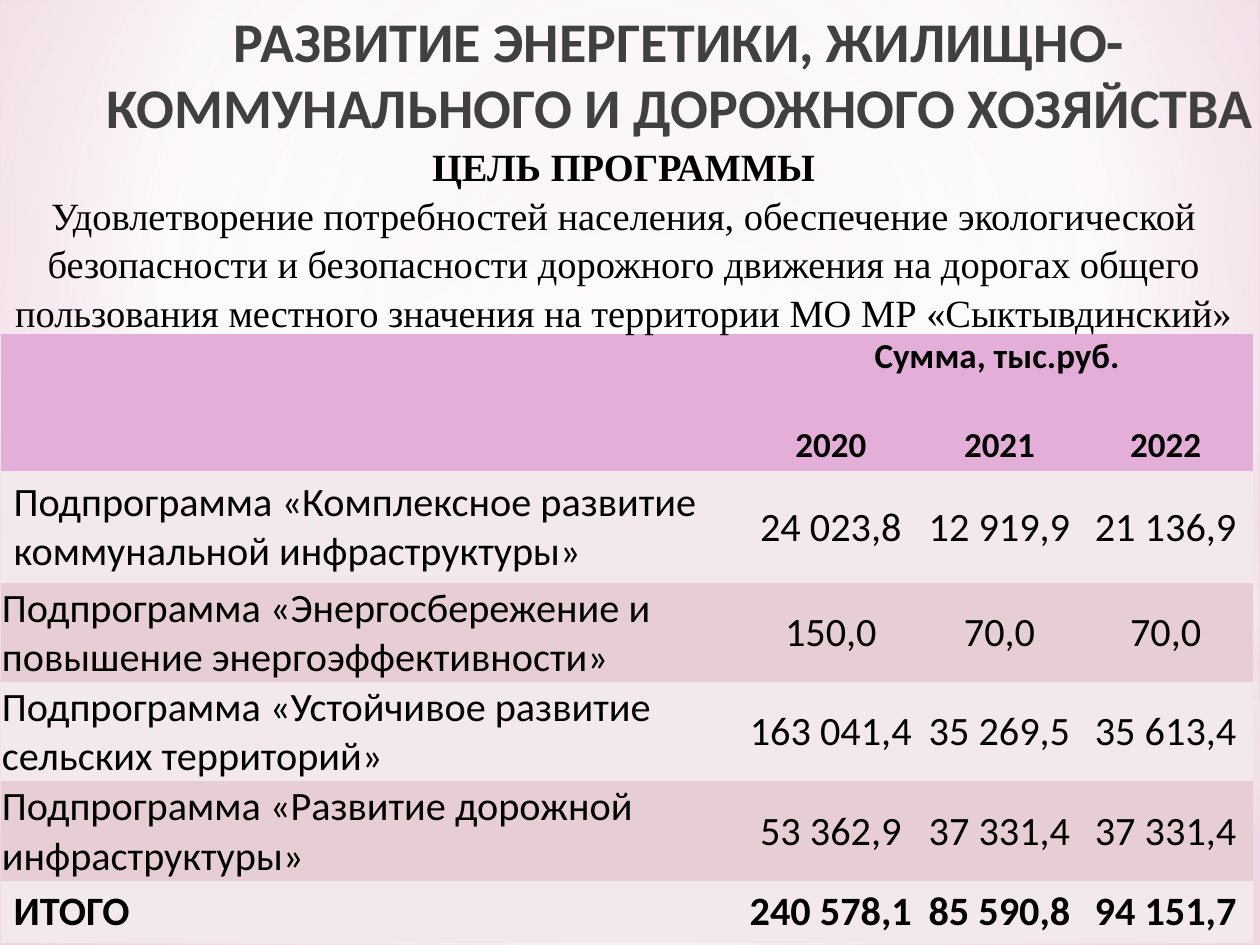
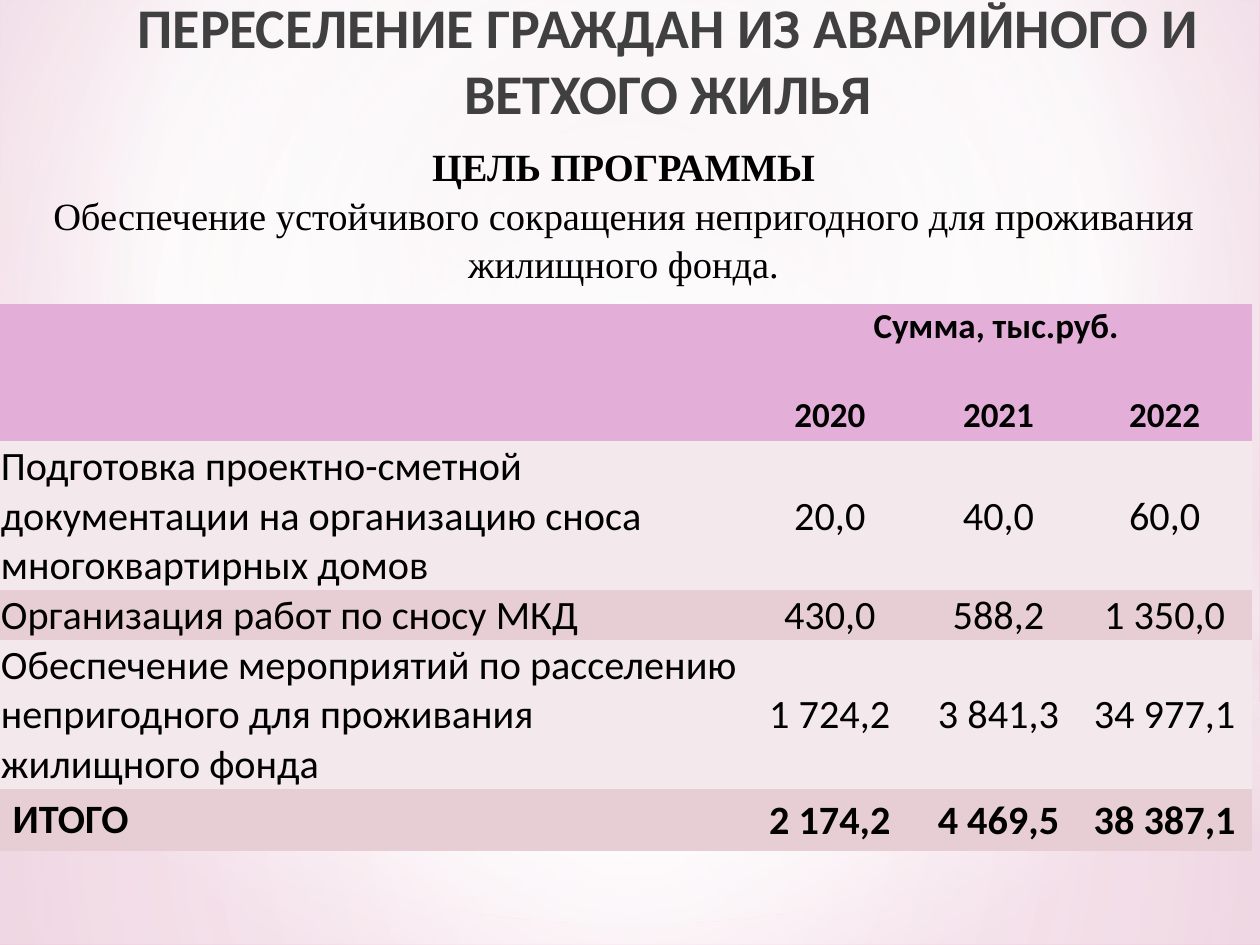
from dataclasses import dataclass

from pptx import Presentation
from pptx.dml.color import RGBColor
from pptx.enum.shapes import MSO_SHAPE
from pptx.enum.text import MSO_ANCHOR, PP_ALIGN
from pptx.oxml import parse_xml
from pptx.oxml.ns import nsdecls, qn
from pptx.util import Cm, Pt


@dataclass(frozen=True)
class Theme:
    title_font: str = "Calibri"
    goal_font: str = "Times New Roman"
    title_size: int = 32
    goal_size: int = 22
    header_size: int = 20
    body_size: int = 23
    title_color: str = "404040"
    text_color: str = "000000"
    header_fill: str = "E3AFD8"
    row_fills: tuple = ("F3E8EB", "E6CED4")
    white: str = "FFFFFF"
    blush: str = "F4E7ED"
    backdrop: tuple = ((0, "EDDAE2", 100), (60, "FFFFFF", 100), (100, "E09DBC", 100))


THEME = Theme()
SLIDE_WIDTH, SLIDE_HEIGHT = 25.4, 19.05
YEARS = ("2020", "2021", "2022")
COLUMN_WIDTHS = (14.93, 3.6, 3.2, 3.5)
HEADER_HEIGHTS = (1.7, 1.07)
LINE_HEIGHT, CELL_PADDING = 1.0, 0.25
NO_TABLE_STYLE = "{2D5ABB26-0587-4C30-8999-92F81FD0307C}"
CENTER = (50, 50, 50, 50)


def set_gradient(fill, owner, stops, focus=None):
    """Circular gradient around focus (left, top, right, bottom), else vertical."""
    fill.solid()
    fill.fore_color.rgb = RGBColor.from_string(THEME.white)
    stop_xml = "".join(
        f'<a:gs pos="{position * 1000}"><a:srgbClr val="{color}">'
        f'<a:alpha val="{opacity * 1000}"/></a:srgbClr></a:gs>'
        for position, color, opacity in stops
    )
    if focus:
        left, top, right, bottom = (side * 1000 for side in focus)
        direction = (f'<a:path path="circle"><a:fillToRect l="{left}" t="{top}" '
                     f'r="{right}" b="{bottom}"/></a:path>')
    else:
        direction = '<a:lin ang="5400000" scaled="0"/>'
    solid = owner.find(".//" + qn("a:solidFill"))
    solid.getparent().replace(solid, parse_xml(
        f'<a:gradFill {nsdecls("a")} rotWithShape="1">'
        f"<a:gsLst>{stop_xml}</a:gsLst>{direction}</a:gradFill>"
    ))


def add_run(paragraph, text, size, font, color=THEME.text_color, bold=False):
    run = paragraph.add_run()
    run.text = text
    run.font.size = Pt(size)
    run.font.name = font
    run.font.bold = bold
    run.font.color.rgb = RGBColor.from_string(color)


def add_text_box(slide, box):
    frame = slide.shapes.add_textbox(*map(Cm, box)).text_frame
    frame.word_wrap = True
    return frame


def add_glow(slide):
    """Soft translucent layers over the backdrop."""
    white, blush = THEME.white, THEME.blush
    horizon = 14.17
    layers = (
        (MSO_SHAPE.RECTANGLE, horizon, SLIDE_HEIGHT - horizon,
         ((0, white, 91), (37, white, 76), (100, blush, 79)), CENTER),
        (MSO_SHAPE.RECTANGLE, 0, horizon,
         ((0, white, 89), (48, white, 62), (100, blush, 79)), CENTER),
        (MSO_SHAPE.RECTANGLE, 10.46, 6.35,
         ((0, white, 0), (29, white, 30), (45, blush, 40),
          (55, white, 26), (65, blush, 60), (100, white, 0)), None),
        (MSO_SHAPE.OVAL, 4.45, horizon, ((0, white, 100), (56, white, 0)), CENTER),
    )
    for kind, top, height, stops, focus in layers:
        shape = slide.shapes.add_shape(kind, 0, Cm(top), Cm(SLIDE_WIDTH), Cm(height))
        shape.shadow.inherit = False
        set_gradient(shape.fill, shape.element.spPr, stops, focus)
        shape.line.fill.background()


def add_title(slide, box, text):
    frame = add_text_box(slide, box)
    frame.margin_top = Cm(0.2)
    paragraph = frame.paragraphs[0]
    paragraph.alignment = PP_ALIGN.CENTER
    paragraph.line_spacing = 0.98
    add_run(paragraph, text, THEME.title_size, THEME.title_font,
            THEME.title_color, bold=True)


def add_goal(slide, box, goal):
    frame = add_text_box(slide, box)
    heading, statement = frame.paragraphs[0], frame.add_paragraph()
    for paragraph, text in ((heading, "ЦЕЛЬ ПРОГРАММЫ"), (statement, goal)):
        paragraph.alignment = PP_ALIGN.CENTER
        paragraph.line_spacing = 1.05
        add_run(paragraph, text, THEME.goal_size, THEME.goal_font,
                bold=paragraph is heading)


def fill_cell(cell, text, size, bold=False, centered=True, padded=False,
              anchor=MSO_ANCHOR.MIDDLE):
    if not padded:
        cell.margin_left = cell.margin_top = cell.margin_right = Cm(0.02)
        cell.margin_bottom = 0
        cell.vertical_anchor = anchor
    paragraph = cell.text_frame.paragraphs[0]
    paragraph.alignment = PP_ALIGN.CENTER if centered else PP_ALIGN.LEFT
    add_run(paragraph, text, size, THEME.title_font, bold=bold)


def add_budget_table(slide, left, top, rows):
    """Each row holds its label, line count, padding flag and yearly sums."""
    heights = list(HEADER_HEIGHTS) + [
        lines * LINE_HEIGHT + padded * CELL_PADDING for _, lines, padded, _ in rows
    ]
    frame = slide.shapes.add_table(
        len(heights), len(COLUMN_WIDTHS), Cm(left), Cm(top),
        Cm(sum(COLUMN_WIDTHS)), Cm(sum(heights)))
    table = frame.table
    table.first_row = table.horz_banding = False
    frame.element.find(".//" + qn("a:tableStyleId")).text = NO_TABLE_STYLE
    for column, width in zip(table.columns, COLUMN_WIDTHS):
        column.width = Cm(width)
    for index, (row, height) in enumerate(zip(table.rows, heights)):
        row.height = Cm(height)
        color = THEME.header_fill if index < 2 else THEME.row_fills[index % 2]
        for cell in row.cells:
            cell.fill.solid()
            cell.fill.fore_color.rgb = RGBColor.from_string(color)

    # Header
    table.cell(0, 0).merge(table.cell(1, 0))
    table.cell(0, 1).merge(table.cell(0, 3))
    fill_cell(table.cell(0, 1), "Сумма, тыс.руб.", THEME.header_size,
              bold=True, anchor=MSO_ANCHOR.TOP)
    for column, year in enumerate(YEARS, 1):
        fill_cell(table.cell(1, column), year, THEME.header_size, bold=True)

    # Programmes and total
    for index, (label, _, padded, sums) in enumerate(rows, 2):
        bold = index == len(heights) - 1
        fill_cell(table.cell(index, 0), label, THEME.body_size, bold,
                  centered=False, padded=padded)
        for column, amount in enumerate(sums, 1):
            fill_cell(table.cell(index, column), amount, THEME.body_size, bold)


def add_programme_slide(presentation, title, title_origin, goal, goal_height,
                        table_origin, rows):
    slide = presentation.slides.add_slide(presentation.slide_layouts[6])
    add_glow(slide)
    add_title(slide, (*title_origin, 24, 2.5), title)
    add_budget_table(slide, *table_origin, rows)
    add_goal(slide, (-0.13, 2.72, SLIDE_WIDTH, goal_height), goal)


def main():
    presentation = Presentation()
    presentation.slide_width = Cm(SLIDE_WIDTH)
    presentation.slide_height = Cm(SLIDE_HEIGHT)
    master = presentation.slide_master
    set_gradient(master.background.fill, master.element, THEME.backdrop, (20, 10, 20, 60))

    # Energy, utilities and roads
    add_programme_slide(
        presentation,
        "РАЗВИТИЕ ЭНЕРГЕТИКИ, ЖИЛИЩНО-КОММУНАЛЬНОГО И ДОРОЖНОГО ХОЗЯЙСТВА",
        (1.7, 0),
        "Удовлетворение потребностей населения, обеспечение экологической "
        "безопасности и безопасности дорожного движения на дорогах общего "
        "пользования местного значения на территории МО МР «Сыктывдинский»",
        4.01,
        (0.02, 6.73),
        (
            ("Подпрограмма «Комплексное развитие коммунальной инфраструктуры»",
             2, True, ("24 023,8", "12 919,9", "21 136,9")),
            ("Подпрограмма «Энергосбережение и повышение энергоэффективности»",
             2, False, ("150,0", "70,0", "70,0")),
            ("Подпрограмма «Устойчивое развитие сельских территорий»",
             2, False, ("163 041,4", "35 269,5", "35 613,4")),
            ("Подпрограмма «Развитие дорожной инфраструктуры»",
             2, False, ("53 362,9", "37 331,4", "37 331,4")),
            ("ИТОГО", 1, True, ("240 578,1", "85 590,8", "94 151,7")),
        ),
    )

    # Resettlement from unsafe housing
    add_programme_slide(
        presentation,
        "ПЕРЕСЕЛЕНИЕ ГРАЖДАН ИЗ АВАРИЙНОГО И ВЕТХОГО ЖИЛЬЯ",
        (1.47, -0.28),
        "Обеспечение устойчивого сокращения непригодного для проживания "
        "жилищного фонда.",
        3.07,
        (0, 6.13),
        (
            ("Подготовка проектно-сметной документации на организацию сноса "
             "многоквартирных домов", 3, False, ("20,0", "40,0", "60,0")),
            ("Организация работ по сносу МКД",
             1, False, ("430,0", "588,2", "1 350,0")),
            ("Обеспечение мероприятий по расселению непригодного для проживания "
             "жилищного фонда", 3, False, ("1 724,2", "3 841,3", "34 977,1")),
            ("ИТОГО", 1, True, ("2 174,2", "4 469,5", "38 387,1")),
        ),
    )
    presentation.save("out.pptx")


if __name__ == "__main__":
    main()
